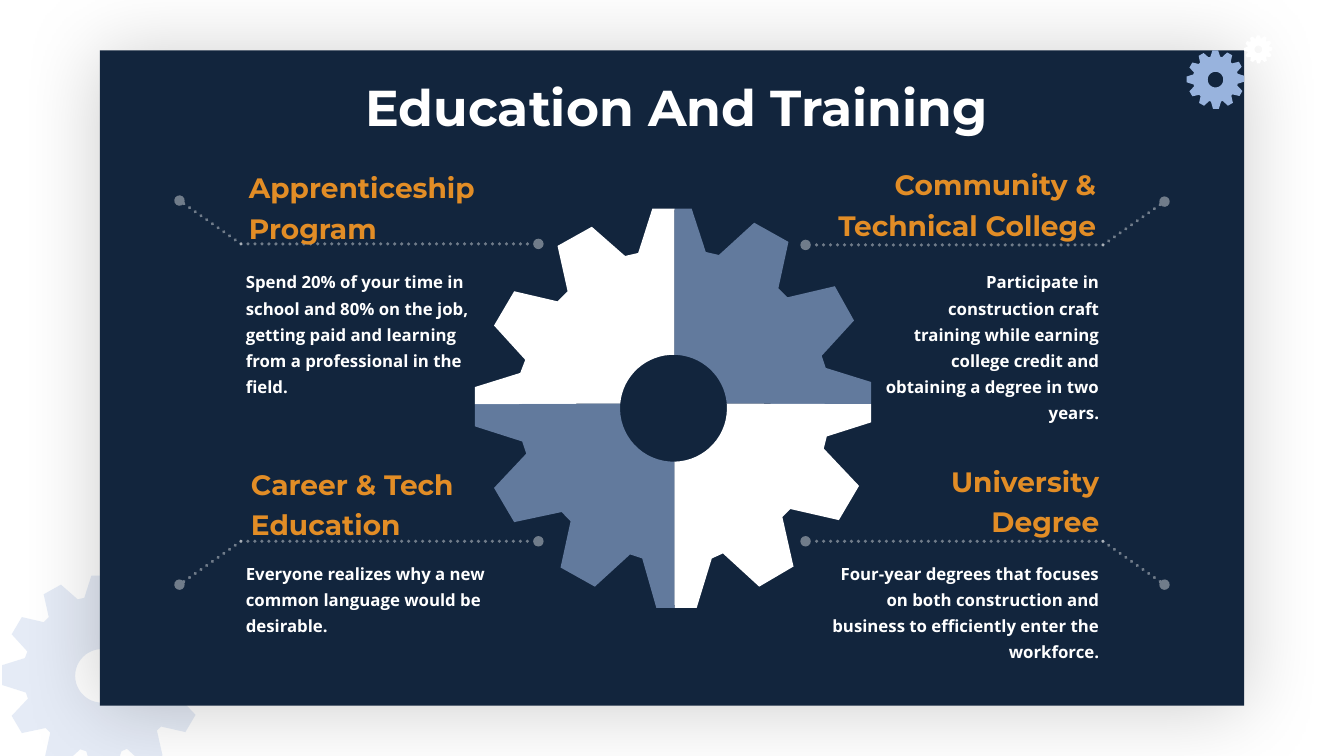
from dataclasses import dataclass
from math import cos, radians, sin
from lxml.etree import SubElement
from pptx import Presentation
from pptx.dml.color import RGBColor
from pptx.enum.dml import MSO_LINE
from pptx.enum.shapes import MSO_CONNECTOR, MSO_SHAPE
from pptx.enum.text import MSO_AUTO_SIZE, PP_ALIGN
from pptx.oxml.ns import qn
from pptx.util import Inches, Pt

Point = tuple[float, float]
Box = tuple[float, float, float, float]


@dataclass(frozen=True)
class Theme:
    navy: str = "12253D"
    blue: str = "98B3DD"
    orange: str = "E28D26"
    white: str = "FFFFFF"
    heading_font: str = "Montserrat"
    body_font: str = "Open Sans"
    title_size: int = 36
    heading_size: int = 20
    body_size: int = 12


@dataclass(frozen=True)
class Callout:
    heading: str
    heading_box: Box
    body: str
    body_box: Box
    elbow: Point
    direction: int  # 1 points right toward the gear, -1 points left
    rise: float


@dataclass(frozen=True)
class Gear:
    box: Box
    color: str
    opacity: int = 100


THEME = Theme()

# Gear outline, clockwise from the left split, in the large gear's inches
GEAR_BOX: Box = (4.71, 2.07, 3.93, 3.96)
RIMS: list[list[Point]] = [
    [(4.71, 4.01), (4.71, 3.84), (5.16, 3.7), (5.21, 3.57), (4.9, 3.23),
     (5.1, 2.89), (5.53, 2.99), (5.63, 2.89), (5.53, 2.44), (5.87, 2.25),
     (6.2, 2.54), (6.33, 2.51), (6.47, 2.07), (6.69, 2.07)],
    [(6.69, 2.07), (6.86, 2.07), (7, 2.5), (7.13, 2.53), (7.48, 2.21),
     (7.82, 2.4), (7.72, 2.86), (7.81, 2.95), (8.28, 2.84), (8.47, 3.18),
     (8.15, 3.53), (8.19, 3.65), (8.64, 3.79), (8.64, 4.01)],
    [(8.64, 4.01), (8.64, 4.19), (8.2, 4.33), (8.17, 4.45), (8.52, 4.82),
     (8.32, 5.16), (7.84, 5.05), (7.76, 5.13), (7.87, 5.62), (7.53, 5.82),
     (7.17, 5.49), (7.06, 5.54), (6.91, 6.03), (6.69, 6.03)],
    [(6.69, 6.03), (6.51, 6.03), (6.37, 5.54), (6.25, 5.5), (5.9, 5.82),
     (5.56, 5.63), (5.66, 5.17), (5.57, 5.08), (5.1, 5.18), (4.9, 4.84),
     (5.22, 4.5), (5.18, 4.38), (4.71, 4.23), (4.71, 4.01)],
]
HUB_CENTER: Point = (6.68, 4.05)
HUB_RADIUS = 0.53
HUB_ANGLES = [185, 271, 355, 449, 545]  # where the quadrant splits meet the hub

BACKGROUND_GEAR = Gear((0.02, 5.71, 1.98, 1.99), THEME.blue, 25)
CORNER_GEARS = [
    Gear((11.77, 0.5, 0.57, 0.58), THEME.blue),
    Gear((12.34, 0.35, 0.28, 0.28), THEME.white),
]
CALLOUTS = [
    Callout("Apprenticeship Program", (2.37, 1.58, 3.42, 0.88),
            "Spend 20% of your time in school and 80% on the job, getting paid "
            "and learning from a professional in the field.",
            (2.34, 2.59, 2.54, 1.13), (2.39, 2.42), 1, -0.43),
    Callout("Career & Tech Education", (2.39, 4.52, 3.14, 0.88),
            "Everyone realizes why a new common language would be desirable.",
            (2.34, 5.48, 3.14, 0.6), (2.39, 5.37), 1, 0.43),
    Callout("Community & Technical College", (7.79, 1.55, 3.18, 0.88),
            "Participate in construction craft training while earning college "
            "credit and obtaining a degree in two years.",
            (8.64, 2.59, 2.36, 1.13), (10.94, 2.43), -1, -0.43),
    Callout("University Degree", (8.35, 4.49, 2.65, 0.88),
            "Four-year degrees that focuses on both construction and business "
            "to efficiently enter the workforce.",
            (7.99, 5.48, 3.01, 0.87), (10.94, 5.37), -1, 0.43),
]


def set_opacity(shape, opacity: int) -> None:
    for color in shape.element.spPr.iter(qn("a:srgbClr")):
        SubElement(color, qn("a:alpha"), val=str(opacity * 1000))


def paint(shape, color: str, opacity: int = 100) -> None:
    shape.shadow.inherit = False
    shape.line.fill.background()
    shape.fill.solid()
    shape.fill.fore_color.rgb = RGBColor.from_string(color)
    if opacity < 100:
        set_opacity(shape, opacity)


def hub_arc(start: float, end: float, steps: int = 16) -> list[Point]:
    angles = [radians(start + (end - start) * i / steps) for i in range(steps + 1)]
    return [(HUB_CENTER[0] + HUB_RADIUS * cos(angle),
             HUB_CENTER[1] + HUB_RADIUS * sin(angle)) for angle in angles]


def add_outline(slide, contours: list[list[Point]], box: Box, color: str,
                opacity: int = 100) -> None:
    """Draw contours given in GEAR_BOX coordinates, scaled into box."""
    def place(point: Point) -> tuple[int, int]:
        x, y = (Inches(box[i] + (point[i] - GEAR_BOX[i]) * box[i + 2] / GEAR_BOX[i + 2])
                for i in range(2))
        return x, y

    first, *others = [[place(point) for point in contour] for contour in contours]
    builder = slide.shapes.build_freeform(*first[0])
    builder.add_line_segments(first[1:], close=True)
    for contour in others:
        builder.move_to(*contour[0])
        builder.add_line_segments(contour[1:], close=True)
    paint(builder.convert_to_shape(), color, opacity)


def add_gear(slide, gear: Gear) -> None:
    rim = [point for quadrant in RIMS for point in quadrant[:-1]]
    add_outline(slide, [rim, hub_arc(360, 0, 48)], gear.box, gear.color, gear.opacity)


def add_text(slide, text: str, box: Box, font_name: str, size: int, color: str,
             alignment: PP_ALIGN, spacing: float = 1.0) -> None:
    frame = slide.shapes.add_textbox(*map(Inches, box)).text_frame
    paragraph = frame.paragraphs[0]
    run = paragraph.add_run()
    run.text = text
    run.font.color.rgb = RGBColor.from_string(color)
    formats = {
        frame: {"word_wrap": True, "auto_size": MSO_AUTO_SIZE.SHAPE_TO_FIT_TEXT},
        paragraph: {"alignment": alignment, "line_spacing": spacing},
        run.font: {"name": font_name, "size": Pt(size), "bold": True},
    }
    for target, values in formats.items():
        for name, value in values.items():
            setattr(target, name, value)


def add_leader(slide, start: Point, end: Point) -> None:
    connector = slide.shapes.add_connector(
        MSO_CONNECTOR.STRAIGHT, *map(Inches, (*start, *end)))
    line = connector.line
    line.color.rgb = RGBColor.from_string(THEME.white)
    line.width = Pt(2.5)
    line.dash_style = MSO_LINE.ROUND_DOT
    outline = connector.element.spPr.find(qn("a:ln"))
    outline.set("cap", "rnd")
    SubElement(outline, qn("a:tailEnd"), type="oval")
    SubElement(connector.element.spPr, qn("a:effectLst"))
    set_opacity(connector, 40)


def add_panel(slide) -> None:
    panel = slide.shapes.add_shape(
        MSO_SHAPE.RECTANGLE, *map(Inches, (0.99, 0.5, 11.35, 6.5)))
    paint(panel, THEME.navy)
    effects = panel.element.spPr.find(qn("a:effectLst"))
    shadow = SubElement(effects, qn("a:outerShdw"), blurRad=str(Pt(58)),
                        dist=str(Pt(3)), dir="5400000", algn="ctr", rotWithShape="0")
    color = SubElement(shadow, qn("a:srgbClr"), val="000000")
    SubElement(color, qn("a:alpha"), val="20000")


def main() -> None:
    presentation = Presentation()
    presentation.slide_width, presentation.slide_height = Inches(13.33), Inches(7.5)
    slide = presentation.slides.add_slide(presentation.slide_layouts[6])

    # Backdrop
    add_gear(slide, BACKGROUND_GEAR)
    add_panel(slide)

    # Dotted leaders
    for callout in CALLOUTS:
        x, y = callout.elbow
        add_leader(slide, callout.elbow, (x + callout.direction * 2.95, y))
        add_leader(slide, callout.elbow, (x - callout.direction * 0.61, y + callout.rise))

    # Central gear in four quadrants
    for index, rim in enumerate(RIMS):
        arc = hub_arc(HUB_ANGLES[index + 1], HUB_ANGLES[index])
        color, opacity = ((THEME.blue, 60) if index % 2 else (THEME.white, 100))
        add_outline(slide, [rim + arc], GEAR_BOX, color, opacity)

    # Callout texts
    for callout in CALLOUTS:
        alignment = PP_ALIGN.LEFT if callout.direction > 0 else PP_ALIGN.RIGHT
        add_text(slide, callout.heading, callout.heading_box, THEME.heading_font,
                 THEME.heading_size, THEME.orange, alignment, 1.2)
        add_text(slide, callout.body, callout.body_box, THEME.body_font,
                 THEME.body_size, THEME.white, alignment, 1.3)

    # Corner gears and title
    for gear in CORNER_GEARS:
        add_gear(slide, gear)
    add_text(slide, "Education And Training", (1.99, 0.71, 9.44, 0.71),
             THEME.heading_font, THEME.title_size, THEME.white, PP_ALIGN.CENTER)
    presentation.save("out.pptx")


if __name__ == "__main__":
    main()
